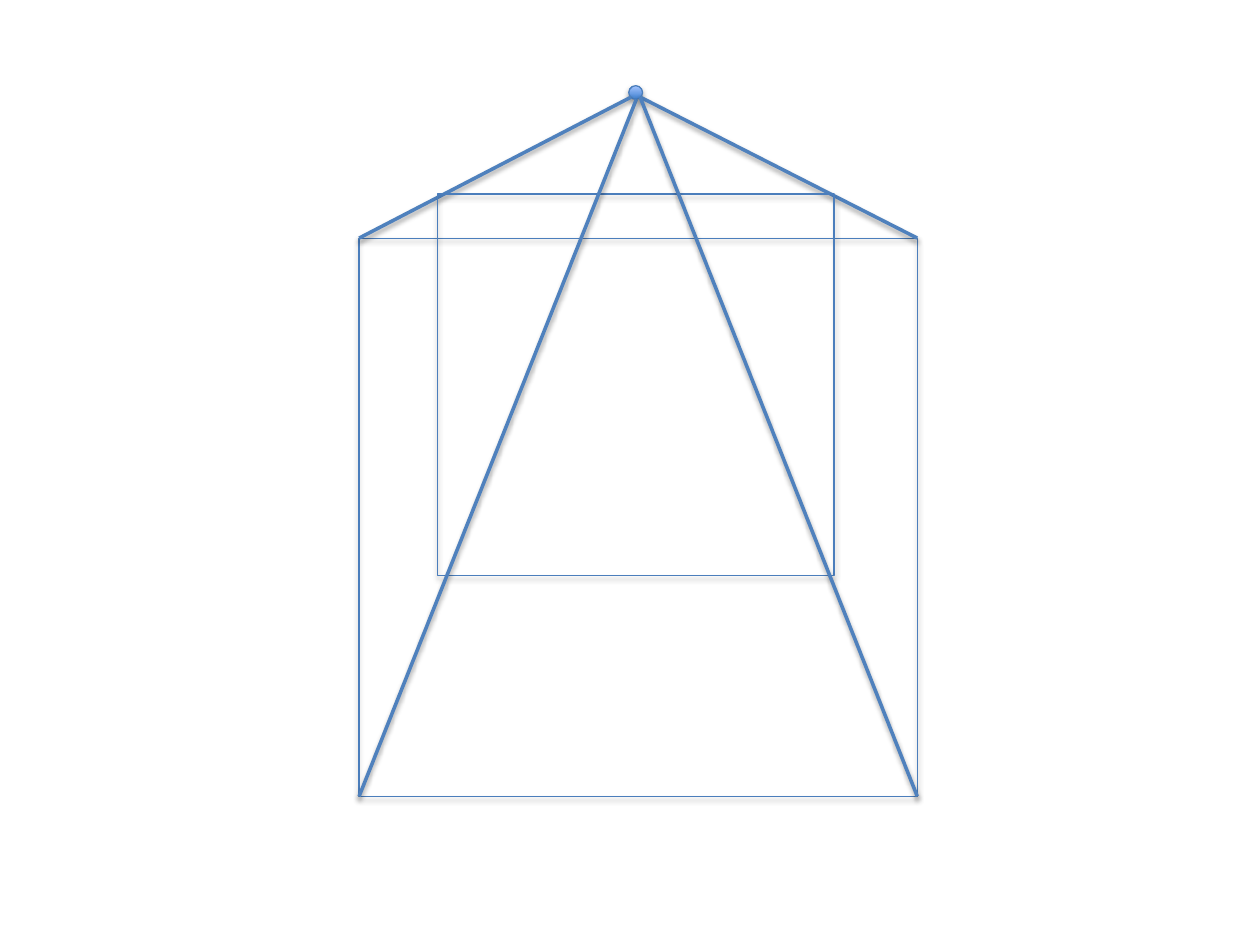
import pptx
import pptx.dml.color
import pptx.enum.shapes
import pptx.oxml
import pptx.oxml.ns
import pptx.util

COLORS = {
    "outline": "4B7EBC",
    "ray": "4F81BD",
    "dot_low": "3F80CE",
    "dot_high": "A4C4FF",
    "shadow": "000000",
}
SLIDE_WIDTH = pptx.util.Inches(10)
SLIDE_HEIGHT = pptx.util.Inches(7.5)
SHAPES = pptx.enum.shapes.MSO_SHAPE


def color(name):
    """Return the named colour as an RGB value."""
    return pptx.dml.color.RGBColor.from_string(COLORS[name])


def across(percent):
    """Return a percentage of the slide width."""
    return round(SLIDE_WIDTH * percent / 100)


def down(percent):
    """Return a percentage of the slide height."""
    return round(SLIDE_HEIGHT * percent / 100)


def cast_shadow(properties, distance, opacity):
    """Append a soft downward shadow to the effects of a shape."""
    effects = properties.find(pptx.oxml.ns.qn("a:effectLst"))
    if effects is None:
        effects = pptx.oxml.parse_xml(f"<a:effectLst {pptx.oxml.ns.nsdecls('a')}/>")
        properties.append(effects)
    effects.append(pptx.oxml.parse_xml(
        f'<a:outerShdw {pptx.oxml.ns.nsdecls("a")} blurRad="{pptx.util.Pt(3.1)}" '
        f'dist="{pptx.util.Pt(distance)}" dir="5400000" rotWithShape="0">'
        f'<a:srgbClr val="{COLORS["shadow"]}"><a:alpha val="{opacity * 1000}"/></a:srgbClr>'
        "</a:outerShdw>"))


def add_outline(slide, kind, left, top, right, bottom):
    """Add an unfilled shape between two corners given in percent."""
    outline = slide.shapes.add_shape(
        kind, across(left), down(top), across(right - left), down(bottom - top))
    outline.fill.background()
    outline.line.color.rgb = color("outline")
    outline.line.width = pptx.util.Pt(0.75)
    outline.shadow.inherit = False
    cast_shadow(outline._element.spPr, 1.8, 35)
    return outline


def add_vanishing_point(slide, left, top, right, bottom):
    """Add the shaded dot where the rays meet."""
    dot = add_outline(slide, SHAPES.OVAL, left, top, right, bottom)
    dot.fill.gradient()
    dot.fill.gradient_angle = 90
    for stop, position, name in zip(dot.fill.gradient_stops, (0, 1), ("dot_low", "dot_high")):
        stop.position = position
        stop.color.rgb = color(name)


def add_ray(slide, corner, apex):
    """Add a thick line from a corner of the front square to the apex."""
    ray = slide.shapes.add_connector(
        pptx.enum.shapes.MSO_CONNECTOR.STRAIGHT,
        across(corner[0]), down(corner[1]), across(apex[0]), down(apex[1]))
    ray.line.color.rgb = color("ray")
    ray.line.width = pptx.util.Pt(2)
    cast_shadow(ray._element.spPr, 1.6, 38)


def main():
    """Build the one-point perspective drawing."""
    presentation = pptx.Presentation()
    presentation.slide_width = SLIDE_WIDTH
    presentation.slide_height = SLIDE_HEIGHT
    slide = presentation.slides.add_slide(presentation.slide_layouts[6])

    left, top, right, bottom = front = (28.5, 25.2, 72.8, 84.27)
    back = (34.7, 20.53, 66.2, 60.93)
    right_apex = (50.8, 10.27)

    add_vanishing_point(slide, 49.9, 9.07, 51, 10.53)
    add_outline(slide, SHAPES.RECTANGLE, *front)
    add_ray(slide, (left, top), (50.1, 10.27))
    add_ray(slide, (right, top), right_apex)
    add_outline(slide, SHAPES.RECTANGLE, *back)
    add_ray(slide, (left, bottom), (50.5, 10.53))
    add_ray(slide, (right, bottom), right_apex)

    presentation.save("out.pptx")


if __name__ == "__main__":
    main()
